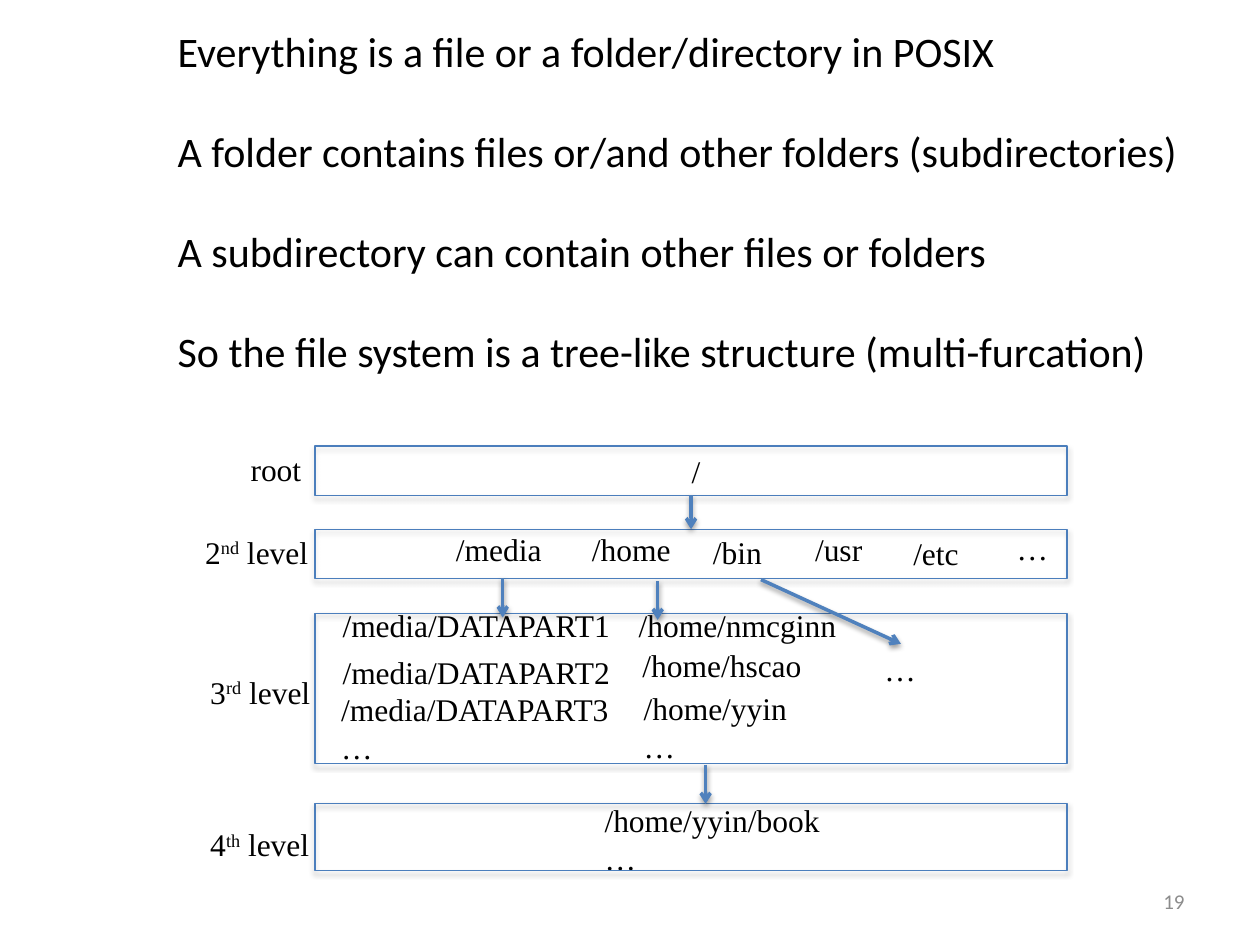
from dataclasses import dataclass

from lxml.etree import SubElement
from pptx import Presentation
from pptx.dml.color import RGBColor
from pptx.enum.shapes import MSO_CONNECTOR as Connector, MSO_SHAPE as Shape
from pptx.enum.text import MSO_ANCHOR as Anchor, MSO_AUTO_SIZE as AutoSize, PP_ALIGN as Align
from pptx.oxml.ns import qn
from pptx.util import Inches, Pt

BLACK = RGBColor(0x00, 0x00, 0x00)
GRAY = RGBColor(0x8C, 0x8C, 0x8C)
BLUE = RGBColor(0x4F, 0x81, 0xBD)
BOX_BLUE = RGBColor(0x4B, 0x7E, 0xBC)
SANS = "Calibri"
SERIF = "Times New Roman"
BOX_LEFT, BOX_WIDTH = 2.5, 5.97
LINE_HEIGHT = 0.4


@dataclass
class Label:
    text: str
    left: float
    top: float
    width: float
    height: float = LINE_HEIGHT


@dataclass
class Level:
    top: float
    height: float


@dataclass
class Arrow:
    x1: float
    y1: float
    x2: float
    y2: float


STATEMENTS = [
    "Everything is a file or a folder/directory in POSIX",
    "A folder contains files or/and other folders (subdirectories)",
    "A subdirectory can contain other files or folders",
    "So the file system is a tree-like structure (multi-furcation)",
]

LEVELS = [Level(3.54, 0.39), Level(4.2, 0.39), Level(4.87, 1.19), Level(6.38, 0.53)]

LABELS = [
    Label("root", 1.89, 3.52, 0.61),
    Label("2^nd^ level", 1.53, 4.18, 1.04),
    Label("3^rd^ level", 1.57, 5.29, 1.02),
    Label("4^th^ level", 1.57, 6.5, 1.01),
    Label("/", 5.39, 3.54, 0.27),
    Label("/media", 3.52, 4.16, 0.89),
    Label("/home", 4.6, 4.16, 0.83),
    Label("/bin", 5.56, 4.18, 0.59),
    Label("/usr", 6.37, 4.16, 0.58),
    Label("/etc", 7.15, 4.19, 0.57),
    Label("…", 7.97, 4.15, 0.45),
    Label("/media/DATAPART1", 2.62, 4.76, 2.35),
    Label("/media/DATAPART2", 2.62, 5.13, 2.35),
    Label("/media/DATAPART3\n…", 2.61, 5.43, 2.35, 0.71),
    Label("/home/nmcginn", 4.97, 4.76, 2.16),
    Label("/home/hscao", 5, 5.08, 1.79),
    Label("/home/yyin\n…", 5.01, 5.42, 1.64, 0.71),
    Label("…", 6.92, 5.11, 0.45),
    Label("/home/yyin/book\n…", 4.7, 6.31, 1.93, 0.71),
]

ARROWS = [
    Arrow(3.99, 4.59, 3.99, 4.9),
    Arrow(5.22, 4.61, 5.22, 4.92),
    Arrow(6.04, 4.6, 7.15, 5.11),
    Arrow(5.6, 6.07, 5.6, 6.38),
]


def add_shadow(shape, distance: float, opacity: int) -> None:
    properties = shape._element.spPr
    for old in properties.findall(qn("a:effectLst")):
        properties.remove(old)
    effects = SubElement(properties, qn("a:effectLst"))
    shadow = SubElement(effects, qn("a:outerShdw"), blurRad=str(Pt(3.1)),
                        dist=str(Pt(distance)), dir="5400000", rotWithShape="0")
    color = SubElement(shadow, qn("a:srgbClr"), val=str(BLACK))
    SubElement(color, qn("a:alpha"), val=str(opacity * 1000))


def write_text(para, text: str, *, font: str = SERIF, size: float = 18,
               color: RGBColor = BLACK, align: Align = Align.LEFT) -> None:
    para.alignment = align
    for index, part in enumerate(text.split("^")):
        span = para.add_run()
        span.text = part
        span.font.name = font
        span.font.size = Pt(size)
        span.font.color.rgb = color
        if index % 2:
            span._r.get_or_add_rPr().set("baseline", "30000")


def add_label(page, label: Label):
    box = page.shapes.add_textbox(Inches(label.left), Inches(label.top),
                                  Inches(label.width), Inches(label.height))
    frame = box.text_frame
    frame.word_wrap = False
    frame.auto_size = AutoSize.SHAPE_TO_FIT_TEXT
    for index, line in enumerate(label.text.split("\n")):
        write_text(frame.add_paragraph() if index else frame.paragraphs[0], line)
    return box


def add_level(page, level: Level):
    box = page.shapes.add_shape(Shape.RECTANGLE, Inches(BOX_LEFT), Inches(level.top),
                                Inches(BOX_WIDTH), Inches(level.height))
    box.fill.background()
    box.line.color.rgb = BOX_BLUE
    box.line.width = Pt(0.75)
    add_shadow(box, 1.8, 35)
    return box


def add_arrow(page, arrow: Arrow):
    connector = page.shapes.add_connector(Connector.STRAIGHT, Inches(arrow.x1), Inches(arrow.y1),
                                          Inches(arrow.x2), Inches(arrow.y2))
    connector.line.color.rgb = BLUE
    connector.line.width = Pt(2)
    SubElement(connector.line._get_or_add_ln(), qn("a:tailEnd"), type="arrow")
    add_shadow(connector, 1.6, 38)
    return connector


def fill_statements(page) -> None:
    body = page.placeholders[1]
    body.left, body.top = Inches(1.31), Inches(0.15)
    body.width, body.height = Inches(8.5), Inches(2.93)
    frame = body.text_frame
    frame.word_wrap = True
    frame.auto_size = AutoSize.NONE
    frame.vertical_anchor = Anchor.TOP
    for index, statement in enumerate(STATEMENTS):
        para = frame.add_paragraph() if index else frame.paragraphs[0]
        write_text(para, statement, font=SANS, size=24)
        para.space_before = Pt(28.5 if index else 0)
        properties = para._p.get_or_add_pPr()
        properties.set("marL", "0")
        properties.set("indent", "0")
        SubElement(properties, qn("a:buNone"))


def add_page_number(page, number: str) -> None:
    box = page.shapes.add_textbox(Inches(7.17), Inches(6.95), Inches(2.33), Inches(LINE_HEIGHT))
    frame = box.text_frame
    frame.word_wrap = True
    frame.vertical_anchor = Anchor.MIDDLE
    write_text(frame.paragraphs[0], number, font=SANS, size=12, color=GRAY, align=Align.RIGHT)


def main() -> None:
    deck = Presentation()
    deck.slide_width, deck.slide_height = Inches(10), Inches(7.5)
    page = deck.slides.add_slide(deck.slide_layouts[1])
    title = page.shapes.title._element
    title.getparent().remove(title)
    fill_statements(page)
    add_page_number(page, "19")
    for label in LABELS:
        add_label(page, label)
    root, second, *_ = [add_level(page, level) for level in LEVELS]
    for arrow in ARROWS:
        add_arrow(page, arrow)
    trunk = add_arrow(page, Arrow(5.49, 3.93, 5.49, 4.2))
    trunk.begin_connect(root, 2)
    trunk.end_connect(second, 0)
    deck.save("out.pptx")


if __name__ == "__main__":
    main()
